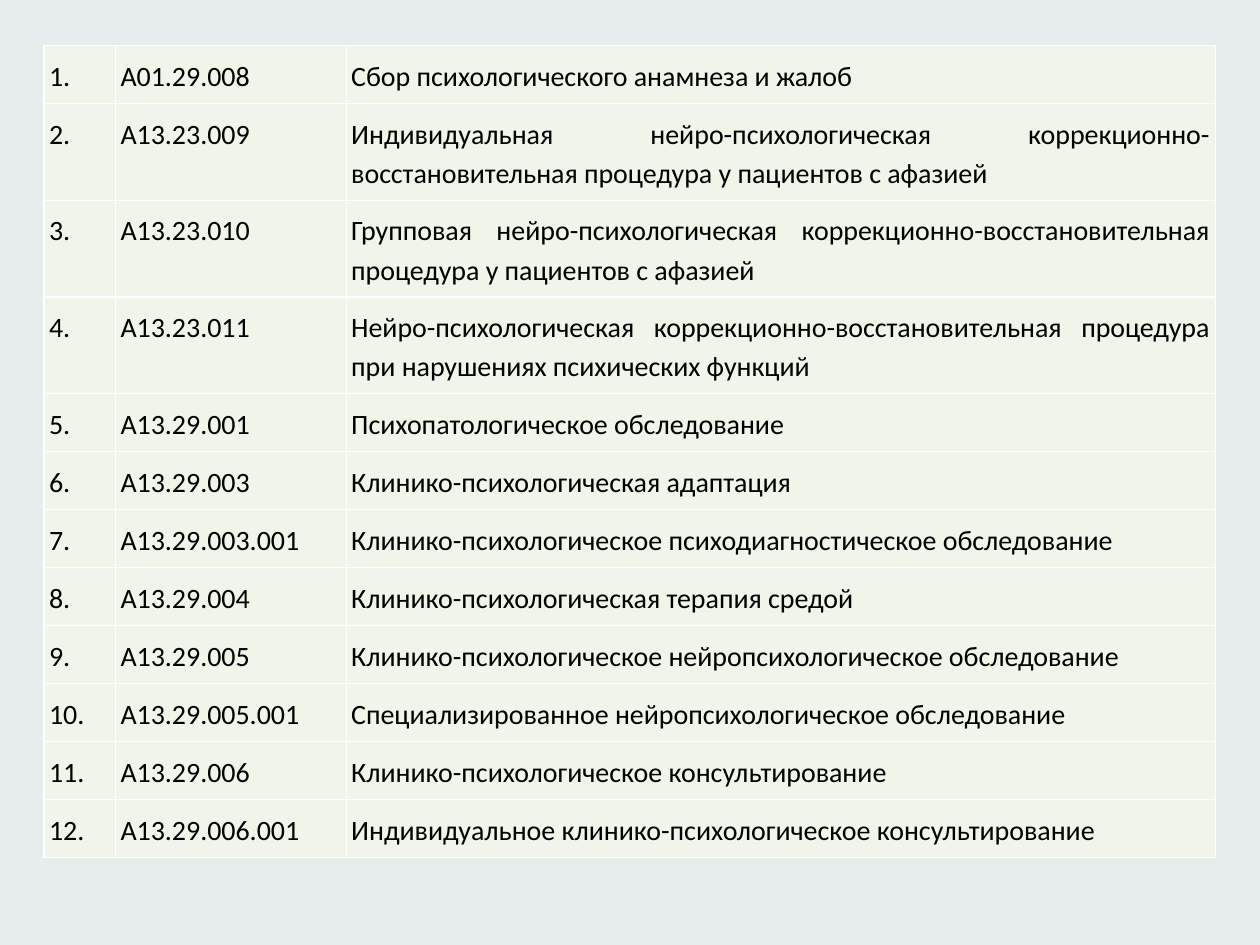
from dataclasses import dataclass

from lxml.etree import SubElement
from pptx import Presentation
from pptx.dml.color import RGBColor
from pptx.enum.text import PP_ALIGN
from pptx.oxml.ns import qn
from pptx.util import Cm, Pt

# Content: service code and service name
SERVICES = [
    ("A01.29.008", "Сбор психологического анамнеза и жалоб"),
    ("A13.23.009", "Индивидуальная нейро-психологическая коррекционно-восстановительная "
                   "процедура у пациентов с афазией"),
    ("A13.23.010", "Групповая нейро-психологическая коррекционно-восстановительная "
                   "процедура у пациентов с афазией"),
    ("A13.23.011", "Нейро-психологическая коррекционно-восстановительная процедура "
                   "при нарушениях психических функций"),
    ("A13.29.001", "Психопатологическое обследование"),
    ("A13.29.003", "Клинико-психологическая адаптация"),
    ("A13.29.003.001", "Клинико-психологическое психодиагностическое обследование"),
    ("A13.29.004", "Клинико-психологическая терапия средой"),
    ("A13.29.005", "Клинико-психологическое нейропсихологическое обследование"),
    ("A13.29.005.001", "Специализированное нейропсихологическое обследование"),
    ("A13.29.006", "Клинико-психологическое консультирование"),
    ("A13.29.006.001", "Индивидуальное клинико-психологическое консультирование"),
]


@dataclass(frozen=True)
class Theme:
    background: str = "E7ECED"
    cell: str = "EFF5E8"
    border: str = "FFFFFF"
    text: str = "000000"
    font: str = "Calibri"
    size: int = 16
    line_spacing: float = 1.15


THEME = Theme()

# Layout
LEFT, TOP = Cm(0.89), Cm(0.92)
COLUMN_WIDTHS = [Cm(1.44), Cm(4.65), Cm(17.52)]
ONE_LINE, TWO_LINES = Cm(1.17), Cm(1.92)
LINE_CAPACITY = 65  # characters of a service name that fit on one line
SIDE_MARGIN, END_MARGIN = Cm(0.1), Cm(0.18)


def add_borders(cell):
    properties = cell._tc.get_or_add_tcPr()
    for side in ("a:lnL", "a:lnR", "a:lnT", "a:lnB"):
        line = SubElement(properties, qn(side), w=str(Pt(1)))
        SubElement(SubElement(line, qn("a:solidFill")), qn("a:srgbClr"), val=THEME.border)


def fill_cell(cell, text):
    add_borders(cell)
    cell.fill.solid()
    cell.fill.fore_color.rgb = RGBColor.from_string(THEME.cell)
    cell.margin_left = cell.margin_right = SIDE_MARGIN
    cell.margin_top = cell.margin_bottom = END_MARGIN
    cell.text = text
    paragraph = cell.text_frame.paragraphs[0]
    paragraph.alignment = PP_ALIGN.JUSTIFY
    paragraph.line_spacing = THEME.line_spacing
    paragraph.font.name = THEME.font
    paragraph.font.size = Pt(THEME.size)
    paragraph.font.color.rgb = RGBColor.from_string(THEME.text)


def main():
    presentation = Presentation()
    presentation.slide_width, presentation.slide_height = Cm(25.4), Cm(19.05)
    slide = presentation.slides.add_slide(presentation.slide_layouts[6])
    slide.background.fill.solid()
    slide.background.fill.fore_color.rgb = RGBColor.from_string(THEME.background)

    # Table of services
    row_heights = [TWO_LINES if len(name) > LINE_CAPACITY else ONE_LINE
                   for _, name in SERVICES]
    services = slide.shapes.add_table(
        len(SERVICES), len(COLUMN_WIDTHS), LEFT, TOP,
        sum(COLUMN_WIDTHS), sum(row_heights)).table
    services.first_row = services.horz_banding = False
    for column, width in zip(services.columns, COLUMN_WIDTHS):
        column.width = width

    # Numbered rows
    for number, (row, height, service) in enumerate(
            zip(services.rows, row_heights, SERVICES), start=1):
        row.height = height
        for cell, text in zip(row.cells, (f"{number}.", *service)):
            fill_cell(cell, text)

    presentation.save("out.pptx")


if __name__ == "__main__":
    main()
